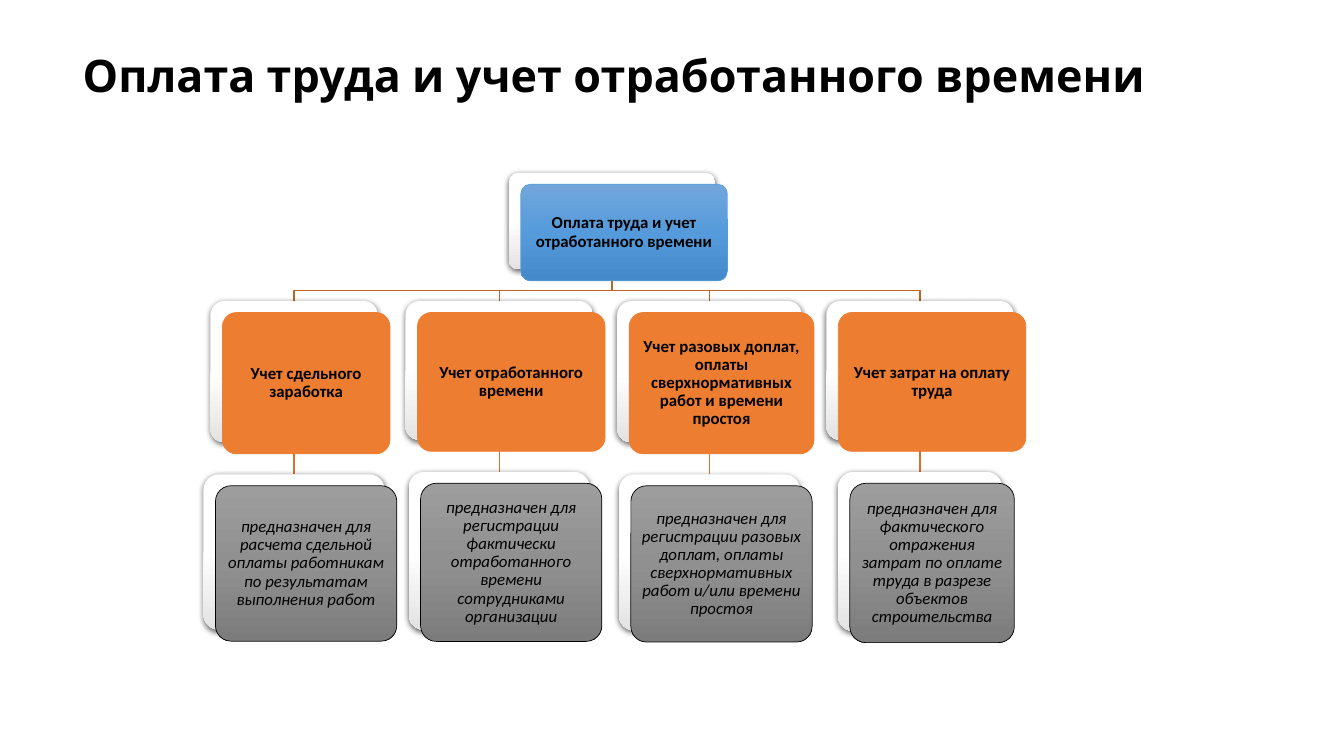
from copy import deepcopy
from dataclasses import dataclass

from lxml.etree import SubElement
from pptx import Presentation
from pptx.dml.color import RGBColor
from pptx.enum.shapes import MSO_CONNECTOR, MSO_SHAPE
from pptx.enum.text import MSO_ANCHOR, PP_ALIGN
from pptx.oxml.ns import qn
from pptx.util import Pt


@dataclass(frozen=True)
class Theme:
    title_font: str = "Karla"
    body_font: str = "Calibri"
    title_size: float = 32
    body_size: float = 12
    text: str = "000000"
    branch: str = "BE6427"
    link: str = "D7712C"
    backing: tuple = ("FFFFFF", "FFFFFF", "E3E3E3")
    root: tuple = ("71A6DB", "559BDB", "448ACA")
    root_edge: str = "5B9BD5"
    section: tuple = ("ED7D31",)
    section_edge: str = "ED7D31"
    purpose: tuple = ("9D9D9D", "909090", "7C7C7C")
    purpose_edge: str = "000000"


theme = Theme()
rgb = RGBColor.from_string
presentation = Presentation()
presentation.slide_width, presentation.slide_height = Pt(960), Pt(540)
slide = presentation.slides.add_slide(presentation.slide_layouts[6])
shapes = slide.shapes


def add_panel(left, top, width, height, colors):
    """Rounded panel with a solid fill or a three-stop vertical gradient."""
    panel = shapes.add_shape(MSO_SHAPE.ROUNDED_RECTANGLE,
                             Pt(left), Pt(top), Pt(width), Pt(height))
    panel.adjustments[0] = 0.1
    panel.shadow.inherit = False
    if len(colors) == 1:
        panel.fill.solid()
        panel.fill.fore_color.rgb = rgb(colors[0])
        return panel
    panel.fill.gradient()
    panel.fill.gradient_angle = 270
    stops = panel._element.spPr.find(qn("a:gradFill")).find(qn("a:gsLst"))
    stops.insert(1, deepcopy(stops[0]))
    for stop, position, color in zip(panel.fill.gradient_stops, (0, 0.5, 1), colors):
        stop.position = position
        stop.color.rgb = rgb(color)
    return panel


def add_card(center, top, width, height, text, colors, edge, italic=False):
    """White shadowed backing with a coloured text panel shifted over it."""
    left = center - width / 2
    backing = add_panel(left, top, width, height, theme.backing)
    backing.line.fill.background()
    effects = backing._element.spPr.find(qn("a:effectLst"))
    shadow = SubElement(effects, qn("a:outerShdw"), blurRad=str(Pt(4.5)),
                        dist=str(Pt(1.5)), dir="5400000", rotWithShape="0")
    shade = SubElement(shadow, qn("a:srgbClr"), val="000000")
    SubElement(shade, qn("a:alpha"), val="63000")

    front = add_panel(left + 8.6, top + 8.2, width, height, colors)
    front.line.color.rgb = rgb(edge)
    front.line.width = Pt(0.5)
    frame = front.text_frame
    frame.word_wrap = True
    frame.vertical_anchor = MSO_ANCHOR.MIDDLE
    frame.margin_left = frame.margin_right = Pt(3.6)
    frame.margin_top = frame.margin_bottom = Pt(3.6)
    label = frame.paragraphs[0]
    label.text = text
    label.alignment = PP_ALIGN.CENTER
    label.line_spacing = 0.9
    label.font.name = theme.body_font
    label.font.size = Pt(theme.body_size)
    label.font.bold = not italic
    label.font.italic = italic
    label.font.color.rgb = rgb(theme.text)


# Title
heading = shapes.add_textbox(Pt(52), Pt(33), Pt(828), Pt(45.5)).text_frame
heading.word_wrap = True
heading.vertical_anchor = MSO_ANCHOR.MIDDLE
title = heading.paragraphs[0]
title.text = "Оплата труда и учет отработанного времени"
title.line_spacing = 0.9
title.font.name = theme.title_font
title.font.size = Pt(theme.title_size)
title.font.bold = True
title.font.color.rgb = rgb(theme.text)

# Sections: center, (width, height) and text of the section, then of its purpose
sections = [
    (210.1, (119.7, 101), "Учет сдельного заработка",
     (129.5, 111),
     "предназначен для расчета сдельной оплаты работникам по результатам выполнения работ"),
    (356.6, (134, 99.2), "Учет отработанного времени",
     (129.5, 113),
     "предназначен для регистрации фактически отработанного времени сотрудниками организации"),
    (506.8, (132, 101), "Учет разовых доплат, оплаты сверхнормативных работ и времени простоя",
     (129.5, 111.6),
     "предназначен для регистрации разовых доплат, оплаты сверхнормативных работ и/или времени простоя"),
    (657.2, (134, 99.2), "Учет затрат на оплату труда",
     (117.5, 113.8),
     "предназначен для фактического отражения затрат по оплате труда в разрезе объектов строительства"),
]
root_center, root_top, root_width, root_height = 437.2, 123.4, 147.6, 69
root_bottom = root_top + root_height
section_top, bus_y, level_gap = 215, 207.4, 22.8

# Branches from the root, and links from each section to its purpose
for center, (_, section_height), *_ in reversed(sections):
    section_bottom = section_top + section_height
    link = shapes.add_connector(MSO_CONNECTOR.STRAIGHT, Pt(center), Pt(section_bottom),
                                Pt(center), Pt(section_bottom + level_gap))
    SubElement(link._element.spPr, qn("a:effectLst"))
    outline = shapes.build_freeform(Pt(root_center), Pt(root_bottom))
    outline.add_line_segments([(Pt(root_center), Pt(bus_y)), (Pt(center), Pt(bus_y)),
                               (Pt(center), Pt(section_top))], close=False)
    branch = outline.convert_to_shape()
    branch.fill.background()
    branch.shadow.inherit = False
    for stroke, color in ((link, theme.link), (branch, theme.branch)):
        stroke.line.color.rgb = rgb(color)
        stroke.line.width = Pt(1)

# Cards
add_card(root_center, root_top, root_width, root_height,
         "Оплата труда и учет отработанного времени", theme.root, theme.root_edge)
for center, section_size, section, purpose_size, purpose in sections:
    add_card(center, section_top, *section_size, section,
             theme.section, theme.section_edge)
    add_card(center, section_top + section_size[1] + level_gap, *purpose_size, purpose,
             theme.purpose, theme.purpose_edge, italic=True)

presentation.save("out.pptx")
